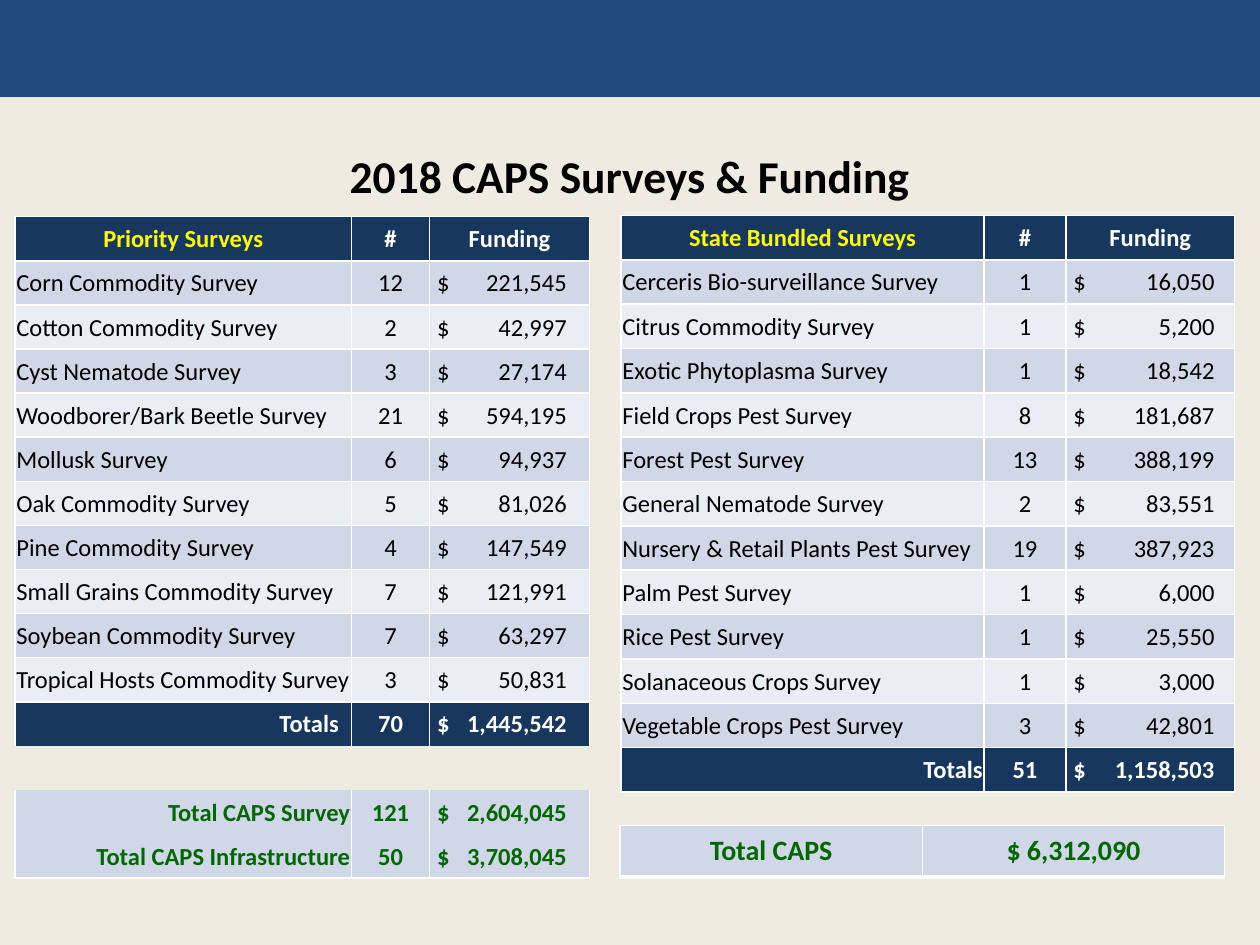
from lxml.etree import SubElement
from pptx import Presentation
from pptx.dml.color import RGBColor
from pptx.enum.shapes import MSO_SHAPE
from pptx.enum.text import MSO_ANCHOR, PP_ALIGN
from pptx.oxml import parse_xml
from pptx.oxml.ns import nsdecls, qn
from pptx.util import Inches, Pt

# Content: survey, number, funding
PRIORITY = [
    ("Corn Commodity Survey", "12", "221,545"),
    ("Cotton Commodity Survey", "2", "42,997"),
    ("Cyst Nematode Survey", "3", "27,174"),
    ("Woodborer/Bark Beetle Survey", "21", "594,195"),
    ("Mollusk Survey", "6", "94,937"),
    ("Oak Commodity Survey", "5", "81,026"),
    ("Pine Commodity Survey", "4", "147,549"),
    ("Small Grains Commodity Survey", "7", "121,991"),
    ("Soybean Commodity Survey", "7", "63,297"),
    ("Tropical Hosts Commodity Survey", "3", "50,831"),
]
PRIORITY_TOTAL = ("Totals", "70", "1,445,542")
CAPS_TOTALS = [
    ("Total CAPS Survey", "121", "2,604,045"),
    ("Total CAPS Infrastructure", "50", "3,708,045"),
]
BUNDLED = [
    ("Cerceris Bio-surveillance Survey", "1", "16,050"),
    ("Citrus Commodity Survey", "1", "5,200"),
    ("Exotic Phytoplasma Survey", "1", "18,542"),
    ("Field Crops Pest Survey", "8", "181,687"),
    ("Forest Pest Survey", "13", "388,199"),
    ("General Nematode Survey", "2", "83,551"),
    ("Nursery & Retail Plants Pest Survey", "19", "387,923"),
    ("Palm Pest Survey", "1", "6,000"),
    ("Rice Pest Survey", "1", "25,550"),
    ("Solanaceous Crops Survey", "1", "3,000"),
    ("Vegetable Crops Pest Survey", "3", "42,801"),
]
BUNDLED_TOTAL = ("Totals", "51", "1,158,503")
GRAND_TOTAL = ("Total CAPS", "$ 6,312,090")

COLORS = {
    "page": "EEECE1", "bar": "1F497D", "head": "17375E", "band": "D0D8E8",
    "light": "E9EDF4", "white": "FFFFFF", "yellow": "FFFF00",
    "green": "006600", "black": "000000",
}
LEFT, CENTER, RIGHT = PP_ALIGN.LEFT, PP_ALIGN.CENTER, PP_ALIGN.RIGHT


def rgb(name):
    return RGBColor.from_string(COLORS[name])


def write(frame, text, size=14, color="black", bold=False, align=LEFT, tab=None):
    para = frame.paragraphs[0]
    para.alignment = align
    if tab:
        stops = SubElement(para._p.get_or_add_pPr(), qn("a:tabLst"))
        SubElement(stops, qn("a:tab"), pos=str(Inches(tab)), algn="r")
    span = para.add_run()
    span.text = text
    span.font.size = Pt(size)
    span.font.name = "Calibri"
    span.font.bold = bold
    span.font.color.rgb = rgb(color)
    return span


def set_borders(cell, sides, bottom=1):
    for side in "LRTB":
        width = bottom if side == "B" else 1
        line = SubElement(cell._tc.get_or_add_tcPr(), qn(f"a:ln{side}"), w=str(Pt(width)))
        if side in sides:
            fill = SubElement(line, qn("a:solidFill"))
            SubElement(fill, qn("a:srgbClr"), val=COLORS["white"])
        else:
            SubElement(line, qn("a:noFill"))


def set_fill(cell, color):
    cell.fill.solid()
    cell.fill.fore_color.rgb = rgb(color)


def add_grid(page, row_count, widths, left, top, height):
    frame = page.shapes.add_table(row_count, len(widths), Inches(left), Inches(top),
                                  Inches(sum(widths)), Inches(height))
    table = frame.table
    table.first_row = table.horz_banding = False
    for column, width in zip(table.columns, widths):
        column.width = Inches(width)
    for row in table.rows:
        row.height = Inches(height / row_count)
    return table


def fill_row(row, texts, fill, colors, tab, bold=True, name_align=RIGHT,
             sides="LRTB", name_gap=0.01):
    """Write one survey row; a funding amount is aligned on a right tab."""
    for index, (cell, text) in enumerate(zip(row.cells, texts)):
        cell.vertical_anchor = MSO_ANCHOR.MIDDLE
        cell.margin_left = cell.margin_right = cell.margin_top = Inches(0.01)
        cell.margin_bottom = 0
        set_borders(cell, sides)
        set_fill(cell, fill)
        align = name_align if index == 0 else CENTER
        stop = None
        if index == 0:
            cell.margin_right = Inches(name_gap)
        elif index == 2 and tab:
            cell.margin_left = Inches(0.06)
            text, align, stop = f"$\t{text}", LEFT, tab
        write(cell.text_frame, text, color=colors[index], bold=bold, align=align, tab=stop)


def fill_surveys(table, title, surveys, total, tab, **total_format):
    rows = list(table.rows)
    fill_row(rows[0], (title, "#", "Funding"), "head", ("yellow", "white", "white"),
             None, name_align=CENTER)
    for index, survey in enumerate(surveys):
        fill_row(rows[index + 1], survey, "light" if index % 2 else "band",
                 ["black"] * 3, tab, bold=False, name_align=LEFT)
    fill_row(rows[len(surveys) + 1], total, "head", ["white"] * 3, tab, **total_format)


deck = Presentation()
deck.slide_width, deck.slide_height = Inches(10), Inches(7.5)
page = deck.slides.add_slide(deck.slide_layouts[6])
page.background.fill.solid()
page.background.fill.fore_color.rgb = rgb("page")

# Top bar
bar = page.shapes.add_shape(MSO_SHAPE.RECTANGLE, 0, 0, deck.slide_width, Inches(0.77))
bar.shadow.inherit = False
bar.fill.solid()
bar.fill.fore_color.rgb = rgb("bar")
bar.line.fill.background()

# Priority surveys, a clear spacer row, then the two CAPS totals
priority = add_grid(page, len(PRIORITY) + 5, (2.67, 0.62, 1.27), 0.12, 1.72, 5.25)
fill_surveys(priority, "Priority Surveys", PRIORITY, PRIORITY_TOTAL, 1.03,
             sides="LRT", name_gap=0.1)
*_, spacer, survey_row, infrastructure_row = priority.rows
for cell in spacer.cells:
    cell.margin_top = cell.margin_bottom = 0
    set_borders(cell, "")
    cell.fill.background()
for row, texts, sides in zip((survey_row, infrastructure_row), CAPS_TOTALS, ("LR", "LRB")):
    fill_row(row, texts, "band", ["green"] * 3, 1.03, sides=sides)

# State bundled surveys
bundled = add_grid(page, len(BUNDLED) + 2, (2.88, 0.65, 1.34), 4.93, 1.71, 4.58)
fill_surveys(bundled, "State Bundled Surveys", BUNDLED, BUNDLED_TOTAL, 1.12)

# Title with a soft text shadow
box = page.shapes.add_textbox(Inches(0.5), Inches(1), Inches(9), Inches(0.78))
box.text_frame.word_wrap = True
box.text_frame.vertical_anchor = MSO_ANCHOR.MIDDLE
title = write(box.text_frame, "2018 CAPS Surveys & Funding", size=26, bold=True, align=CENTER)
shadow = parse_xml(
    f'<a:effectLst {nsdecls("a")}><a:outerShdw blurRad="38100" dist="38100" dir="2700000">'
    '<a:srgbClr val="000000"><a:alpha val="43000"/></a:srgbClr></a:outerShdw></a:effectLst>')
title._r.rPr.find(qn("a:solidFill")).addnext(shadow)

# Grand total
grand = add_grid(page, 1, (2.4, 2.4), 4.92, 6.55, 0.41)
for cell, text in zip(grand.rows[0].cells, GRAND_TOTAL):
    cell.vertical_anchor = MSO_ANCHOR.MIDDLE
    set_borders(cell, "LRTB", bottom=3)
    set_fill(cell, "band")
    write(cell.text_frame, text, size=16, color="green", bold=True, align=CENTER)

deck.save("out.pptx")
